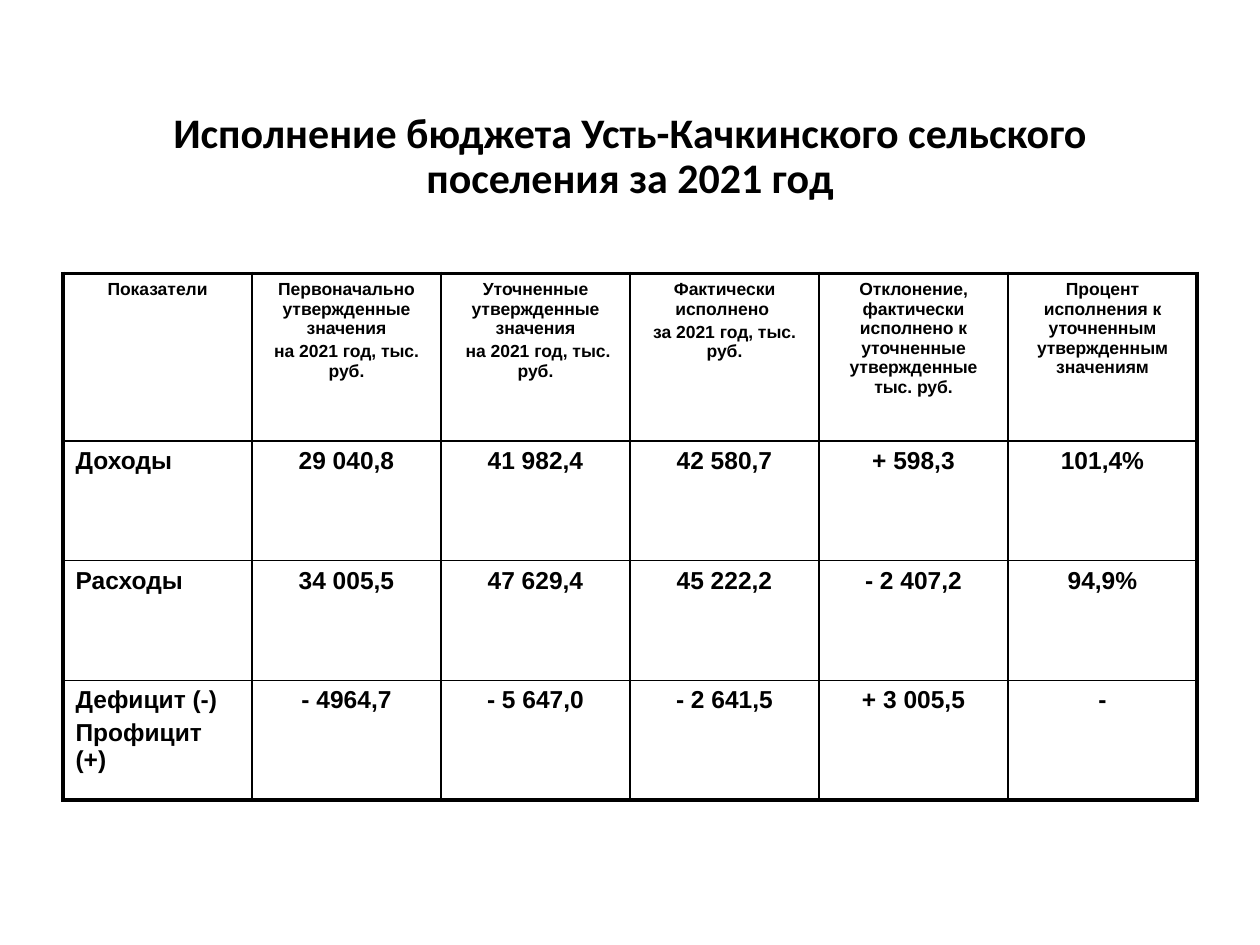
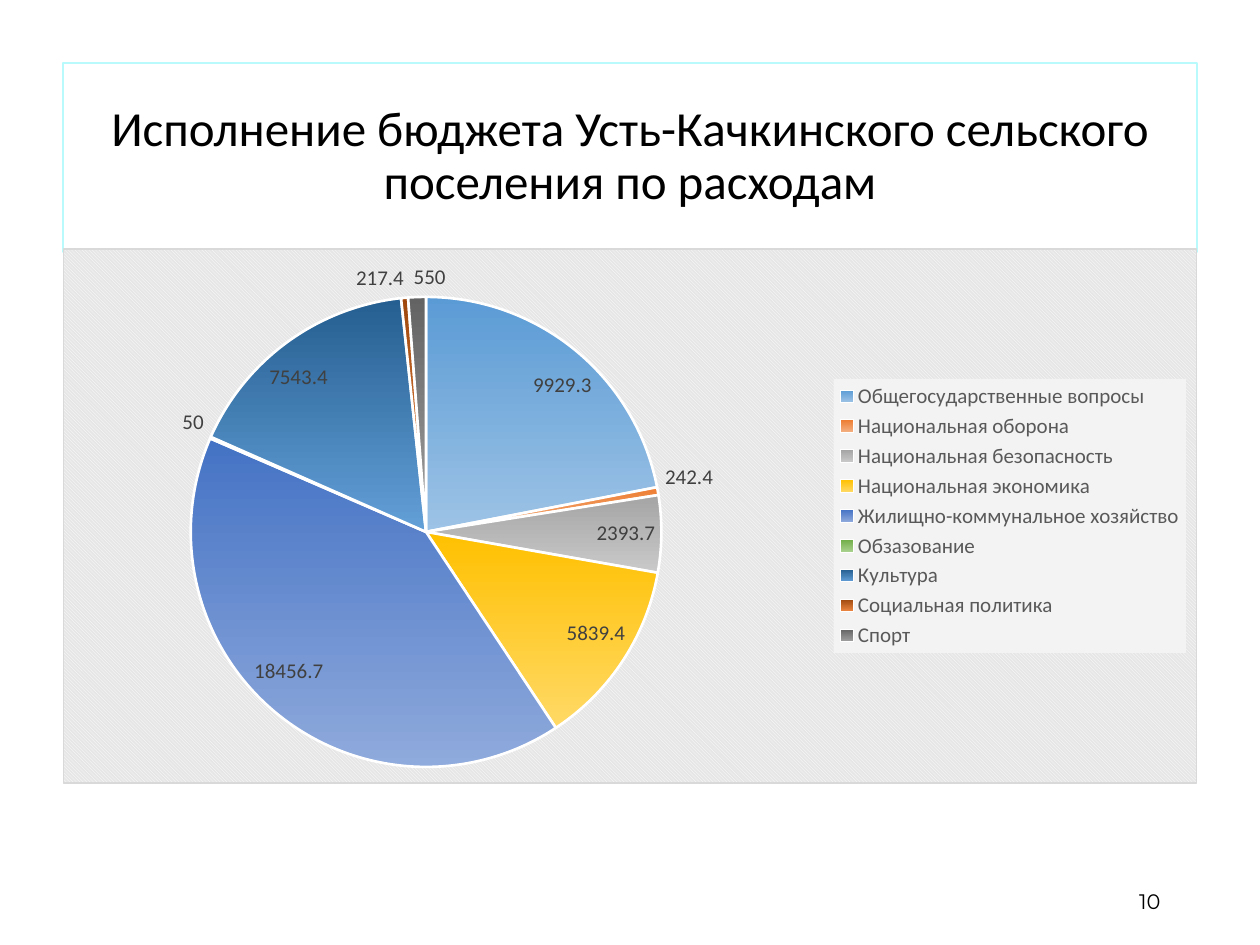
from lxml import etree
from pptx import Presentation
from pptx.chart.data import CategoryChartData
from pptx.dml.color import RGBColor
from pptx.enum.chart import XL_CHART_TYPE, XL_LABEL_POSITION, XL_LEGEND_POSITION
from pptx.enum.text import MSO_ANCHOR, PP_ALIGN
from pptx.oxml import parse_xml
from pptx.oxml.ns import nsdecls, qn
from pptx.util import Inches, Pt

PIE = XL_CHART_TYPE.PIE
BEST_FIT = XL_LABEL_POSITION.BEST_FIT
LEGEND_RIGHT = XL_LEGEND_POSITION.RIGHT
MIDDLE = MSO_ANCHOR.MIDDLE
LEFT, CENTER, RIGHT = PP_ALIGN.LEFT, PP_ALIGN.CENTER, PP_ALIGN.RIGHT

BLACK = RGBColor(0x00, 0x00, 0x00)
WHITE = RGBColor(0xFF, 0xFF, 0xFF)
PALE_CYAN = RGBColor(0xB9, 0xFA, 0xFD)
LEGEND_GRAY = RGBColor(0x59, 0x59, 0x59)
LABEL_GRAY = RGBColor(0x40, 0x40, 0x40)

MARGIN = 0.5
CONTENT_WIDTH = 9
TITLE_BOX = (MARGIN, MARGIN, CONTENT_WIDTH, 1.5)
THIN, THICK = 1, 2.25


def style_paragraph(paragraph, font_name, size, align, bold=False):
    paragraph.alignment = align
    for run in paragraph.runs:
        run.font.name = font_name
        run.font.size = Pt(size)
        run.font.bold = bold
        run.font.color.rgb = BLACK


def add_text(slide, box, text, font_name, size, align, bold=False):
    """Add a wrapped, vertically centred one-paragraph text box."""
    text_box = slide.shapes.add_textbox(*map(Inches, box))
    frame = text_box.text_frame
    frame.word_wrap = True
    frame.vertical_anchor = MIDDLE
    frame.text = text
    style_paragraph(frame.paragraphs[0], font_name, size, align, bold)
    return text_box


prs = Presentation()
prs.slide_width, prs.slide_height = Inches(10), Inches(7.5)
blank = prs.slide_layouts[6]

# Slide 1: budget table
budget_slide = prs.slides.add_slide(blank)
title = add_text(budget_slide, TITLE_BOX,
                 "Исполнение бюджета Усть-Качкинского сельского поселения за 2021 год",
                 "Calibri", 24, CENTER, bold=True)
title.text_frame.paragraphs[0].line_spacing = 0.9

budget_rows = [
    ["Показатели",
     "Первоначально утвержденные значения\nна 2021 год, тыс. руб.",
     "Уточненные утвержденные значения\n на 2021 год, тыс. руб.",
     "Фактически исполнено \nза 2021 год, тыс. руб.",
     "Отклонение, фактически исполнено к уточненные утвержденные тыс. руб.",
     "Процент исполнения к уточненным утвержденным значениям"],
    ["Доходы", "29 040,8", "41 982,4", "42 580,7", "+ 598,3", "101,4%"],
    ["Расходы", "34 005,5", "47 629,4", "45 222,2", "- 2 407,2", "94,9%"],
    ["Дефицит (-)\nПрофицит (+)", "- 4964,7", "- 5 647,0", "- 2 641,5", "+ 3 005,5", "-"],
]
row_heights = [1.33, 0.95, 0.95, 0.95]
last_row, last_column = len(budget_rows) - 1, len(budget_rows[0]) - 1

budget = budget_slide.shapes.add_table(
    last_row + 1, last_column + 1, Inches(MARGIN), Inches(2.17),
    Inches(CONTENT_WIDTH), Inches(sum(row_heights))).table
budget.first_row = budget.horz_banding = False

for r, (height, values) in enumerate(zip(row_heights, budget_rows)):
    budget.rows[r].height = Inches(height)
    size = 10 if r == 0 else 14
    for c, value in enumerate(values):
        cell = budget.cell(r, c)
        cell.text_frame.text = value
        align = LEFT if r > 0 and c == 0 else CENTER
        for paragraph in cell.text_frame.paragraphs:
            style_paragraph(paragraph, "Arial", size, align, bold=True)
            paragraph.space_before = Pt(size * 0.2)
        outer_edges = {"lnL": c == 0, "lnR": c == last_column,
                       "lnT": r == 0, "lnB": r == last_row}
        for edge, is_outer in outer_edges.items():
            width = Pt(THICK if is_outer else THIN)
            cell._tc.get_or_add_tcPr().append(parse_xml(
                f'<a:{edge} {nsdecls("a")} w="{width}"><a:solidFill>'
                f'<a:srgbClr val="{BLACK}"/></a:solidFill></a:{edge}>'))
        cell.fill.background()

# Slide 2: spending by section
spending_slide = prs.slides.add_slide(blank)
title = add_text(spending_slide, TITLE_BOX,
                 "Исполнение бюджета Усть-Качкинского сельского поселения по расходам",
                 "Calibri", 28, CENTER)
title.text_frame.paragraphs[0].line_spacing = 0.9
title.fill.solid()
title.fill.fore_color.rgb = WHITE
title.line.color.rgb = PALE_CYAN
title.line.width = Pt(0.75)

spending = [
    ("Общегосударственные вопросы", 9929.3, "5B9BD5", "9DC3E6"),
    ("Национальная оборона", 242.4, "ED7D31", "F4B183"),
    ("Национальная безопасность", 2393.7, "A5A5A5", "C9C9C9"),
    ("Национальная экономика", 5839.4, "FFC000", "FFD966"),
    ("Жилищно-коммунальное хозяйство", 18456.7, "4472C4", "8FAADC"),
    ("Обзазование", 50, "70AD47", "A9D18E"),
    ("Культура", 7543.4, "255E91", "63A0D7"),
    ("Социальная политика", 217.4, "9E480E", "EF8944"),
    ("Спорт", 550, "636363", "A1A1A1"),
]
spending_data = CategoryChartData()
spending_data.categories = [section[0] for section in spending]
spending_data.add_series("Series 1", [section[1] for section in spending])
chart = spending_slide.shapes.add_chart(
    PIE, Inches(MARGIN), Inches(1.97), Inches(CONTENT_WIDTH), Inches(4.25),
    spending_data).chart
chart.has_title = False
chart.font.name = "Calibri"
chart.font.size = Pt(10)
chart.font.color.rgb = BLACK

pie = chart.plots[0]
pie.vary_by_categories = True
for i, (_, _, top_color, bottom_color) in enumerate(spending):
    slice_format = pie.series[0].points[i].format
    slice_format.fill.gradient()
    slice_format.fill.gradient_angle = 270
    for stop, color in zip(slice_format.fill.gradient_stops, (top_color, bottom_color)):
        stop.color.rgb = RGBColor.from_string(color)
    slice_format.line.color.rgb = WHITE
    slice_format.line.width = Pt(1.5)

pie.has_data_labels = True
labels = pie.data_labels
labels.show_value = True
labels.show_percentage = False
labels.position = BEST_FIT

chart.has_legend = True
legend = chart.legend
legend.position = LEGEND_RIGHT
legend.include_in_layout = False
for font, color in ((labels.font, LABEL_GRAY), (legend.font, LEGEND_GRAY)):
    font.name = "Calibri"
    font.size = Pt(12)
    font.color.rgb = color

chart_space = chart.element
chart_space.find(qn("c:chart")).addnext(parse_xml(
    f'<c:spPr {nsdecls("c", "a")}><a:pattFill prst="dkDnDiag">'
    '<a:fgClr><a:srgbClr val="FFFFFF"/></a:fgClr>'
    '<a:bgClr><a:srgbClr val="E6E6E6"/></a:bgClr></a:pattFill>'
    f'<a:ln w="{Pt(0.75)}"><a:solidFill><a:srgbClr val="D9D9D9"/></a:solidFill></a:ln>'
    '</c:spPr>'))
chart_space.find(".//" + qn("c:legend")).find(qn("c:overlay")).addnext(parse_xml(
    f'<c:spPr {nsdecls("c", "a")}><a:solidFill><a:srgbClr val="F3F3F3"/>'
    '</a:solidFill></c:spPr>'))

plot_area = chart_space.find(".//" + qn("c:plotArea"))
for automatic_layout in plot_area.findall(qn("c:layout")):
    plot_area.remove(automatic_layout)
layout = etree.Element(qn("c:layout"))
manual = etree.SubElement(layout, qn("c:manualLayout"))
for tag, value in (("layoutTarget", "inner"), ("xMode", "edge"), ("yMode", "edge"),
                   ("x", "0.11"), ("y", "0.09"), ("w", "0.42"), ("h", "0.88")):
    etree.SubElement(manual, qn("c:" + tag)).set("val", value)
plot_area.insert(0, layout)

add_text(spending_slide, (7.06, 6.95, 2.25, 0.4), "10", "Montserrat", 12, RIGHT)

prs.save("out.pptx")
